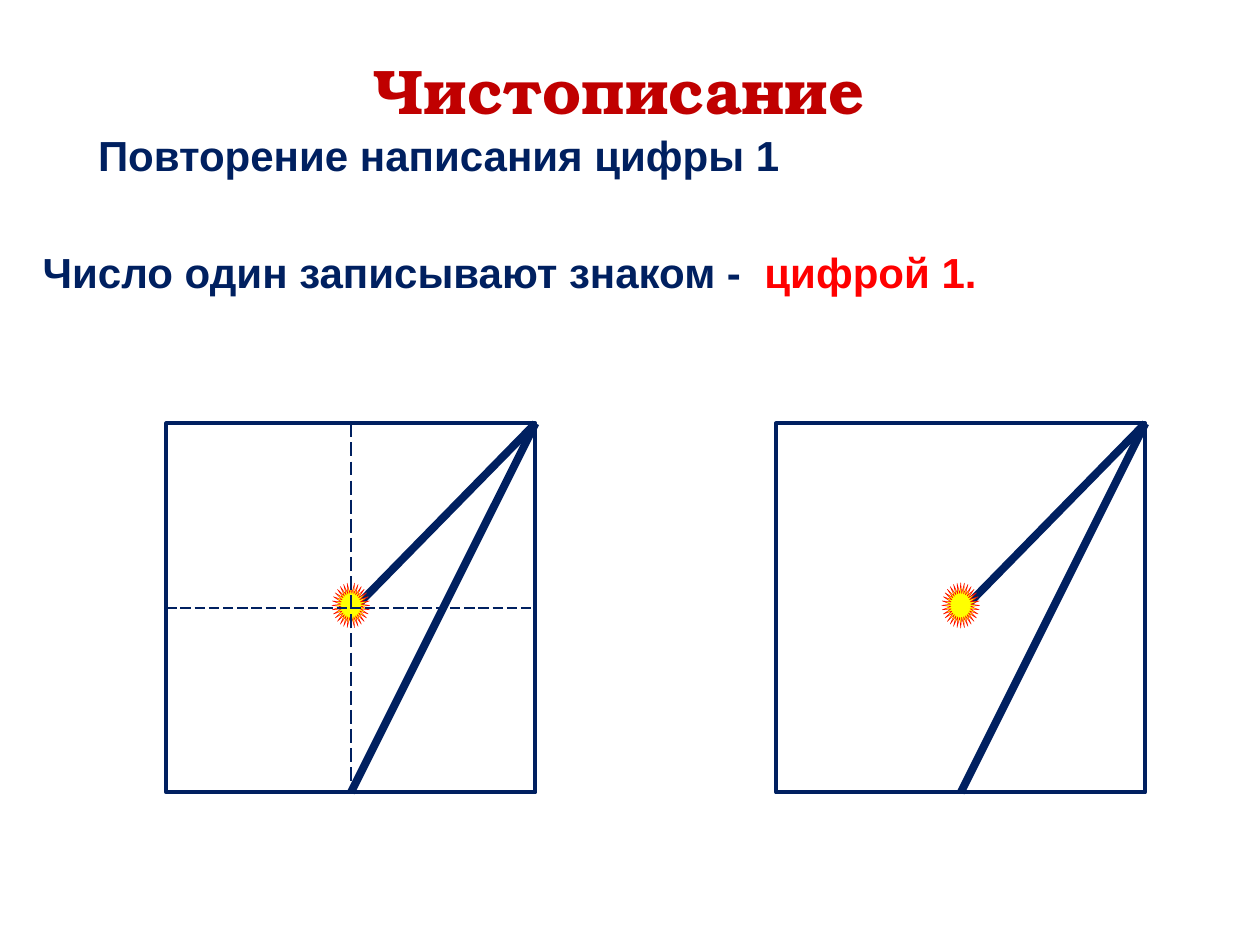
from pptx import Presentation
from pptx.dml.color import RGBColor
from pptx.enum.dml import MSO_LINE
from pptx.enum.shapes import MSO_CONNECTOR, MSO_SHAPE
from pptx.enum.text import PP_ALIGN
from pptx.oxml.ns import qn
from pptx.util import Inches, Pt
from lxml import etree

STRAIGHT = MSO_CONNECTOR.STRAIGHT
RECT, STAR = MSO_SHAPE.RECTANGLE, MSO_SHAPE.STAR_32_POINT
LONG_DASH = MSO_LINE.LONG_DASH
LEFT, JUSTIFY = PP_ALIGN.LEFT, PP_ALIGN.JUSTIFY

THEME = {
    "navy": "002060", "red": "FF0000", "dark_red": "C00000", "yellow": "FFFF00",
    "body_font": "Arial", "title_font": "TeX Gyre Bonum",
    "body_size": 24, "title_size": 36,
    "stroke": 4.5, "frame": 2.25, "star_edge": 0.25,
}

# box (left, top, width, height), runs (text, colour), role, alignment, indent, wrap
TEXTS = [
    ((0.22, 0.98, 9.63, 0.5), [("Повторение написания цифры 1", "navy")],
     "body", JUSTIFY, 0.46, True),
    ((0.24, 1.91, 9.25, 0.5),
     [("Число один записывают знаком -  ", "navy"), ("цифрой 1.", "red")],
     "body", LEFT, 0, True),
    ((2.87, 0.36, 4.17, 0.71), [("Чистописание", "dark_red")],
     "title", LEFT, 0, False),
]

CELL_TOP, CELL_SIZE = 3.36, 2.93
CELLS = [(1.32, True), (6.16, False)]  # left edge, with dashed guides
STAR_W, STAR_H = 0.3, 0.36


def color(name):
    return RGBColor.from_string(THEME[name])


def add_text(slide, box, runs, role, align, indent, wrap):
    tf = slide.shapes.add_textbox(*map(Inches, box)).text_frame
    tf.word_wrap = wrap
    p = tf.paragraphs[0]
    p.alignment = align
    if indent:
        p._p.get_or_add_pPr().set("indent", str(Inches(indent)))
    for text, name in runs:
        r = p.add_run()
        r.text = text
        r.font.name = THEME[role + "_font"]
        r.font.size = Pt(THEME[role + "_size"])
        r.font.bold = True
        r.font.color.rgb = color(name)


def add_line(slide, start, end, width, dash=None):
    s = slide.shapes.add_connector(STRAIGHT, *map(Inches, start + end))
    s.line.color.rgb = color("navy")
    s.line.width = Pt(width)
    if dash:
        s.line.dash_style = dash
    etree.SubElement(s._element.spPr, qn("a:effectLst"))


def add_outlined(slide, kind, box, line, width, fill=None):
    s = slide.shapes.add_shape(kind, *map(Inches, box))
    s.shadow.inherit = False
    if fill:
        s.fill.solid()
        s.fill.fore_color.rgb = color(fill)
    else:
        s.fill.background()
    s.line.color.rgb = color(line)
    s.line.width = Pt(width)
    return s


def add_cell(slide, left, guides):
    """Draw a square cell with the digit 1 starting from a star at its centre."""
    right, bottom = left + CELL_SIZE, CELL_TOP + CELL_SIZE
    mid_x, mid_y = left + CELL_SIZE / 2, CELL_TOP + CELL_SIZE / 2
    corner = (right, CELL_TOP)
    add_line(slide, (mid_x + 0.03, mid_y), corner, THEME["stroke"])
    add_line(slide, corner, (mid_x, bottom), THEME["stroke"])
    star = add_outlined(slide, STAR,
                        (mid_x - STAR_W / 2, mid_y - 0.2, STAR_W, STAR_H),
                        "red", THEME["star_edge"], "yellow")
    star.adjustments[0] = 0.263
    add_outlined(slide, RECT, (left, CELL_TOP, CELL_SIZE, CELL_SIZE),
                 "navy", THEME["frame"])
    if guides:
        add_line(slide, (mid_x, CELL_TOP), (mid_x, bottom), 1, LONG_DASH)
        add_line(slide, (left, mid_y), (right, mid_y), 0.75, LONG_DASH)


def main():
    prs = Presentation()
    prs.slide_width, prs.slide_height = Inches(10), Inches(7.5)
    slide = prs.slides.add_slide(prs.slide_layouts[6])
    for text in TEXTS:
        add_text(slide, *text)
    for left, guides in CELLS:
        add_cell(slide, left, guides)
    prs.save("out.pptx")


if __name__ == "__main__":
    main()
